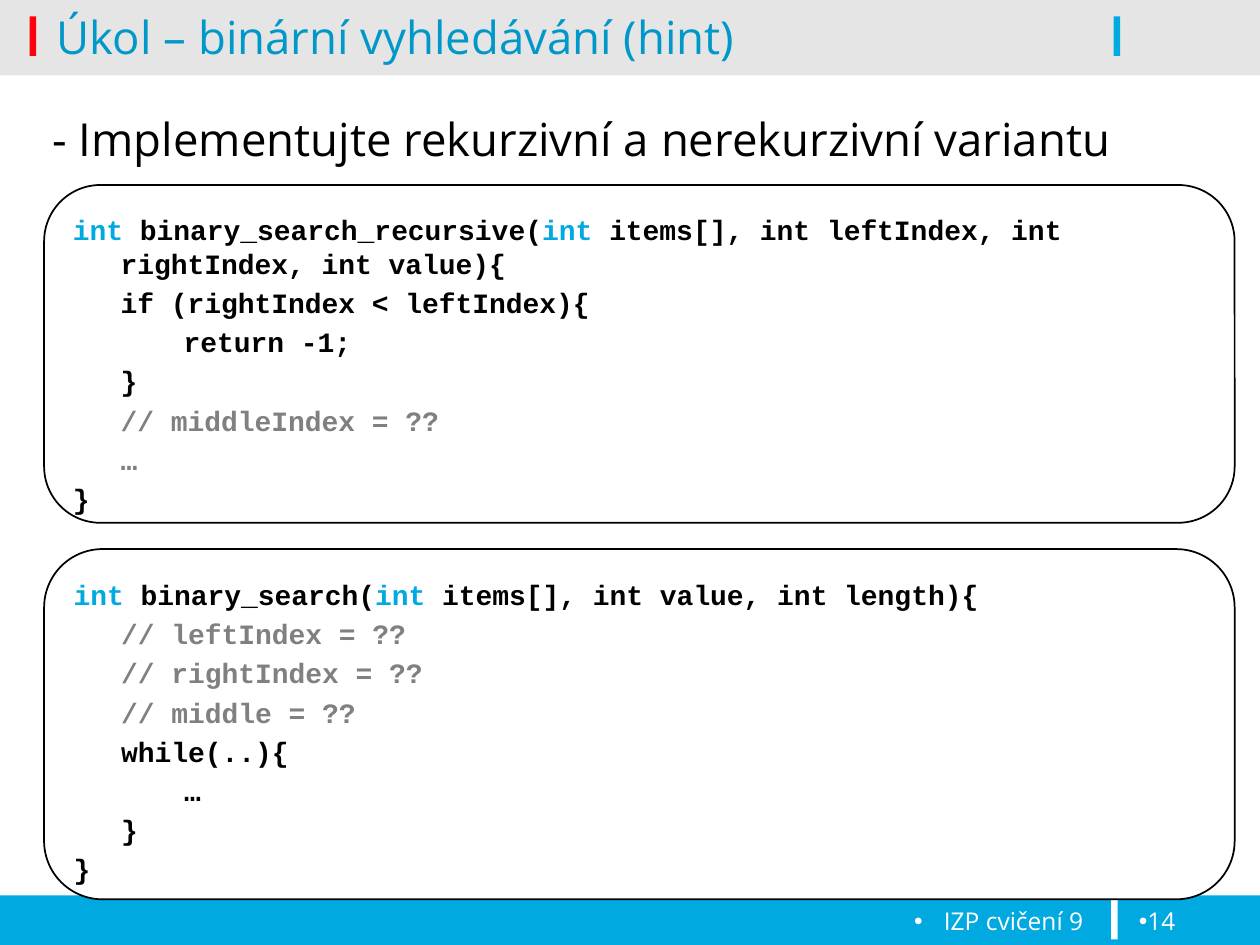
from dataclasses import dataclass

from pptx import Presentation
from pptx.dml.color import RGBColor
from pptx.enum.shapes import MSO_SHAPE as Preset
from pptx.enum.text import MSO_ANCHOR as Anchor, PP_ALIGN as Align
from pptx.oxml.ns import qn
from pptx.util import Cm, Pt
from lxml.etree import SubElement


@dataclass(frozen=True)
class Theme:
    blue: str = "00A9E0"
    red: str = "FE000C"
    white: str = "FFFFFF"
    black: str = "000000"
    gray: str = "808080"
    sans: str = "Open Sans"
    mono: str = "Courier New"
    large: int = 26
    code: int = 16
    small: int = 14


THEME = Theme()

RECURSIVE = [
    [("int ", THEME.blue), ("binary_search_recursive(", THEME.black), ("int ", THEME.blue),
     ("items[], int leftIndex, int rightIndex, int value){", THEME.black)],
    [("\tif (rightIndex < leftIndex){", THEME.black)],
    [("\t\treturn -1;", THEME.black)],
    [("\t}", THEME.black)],
    [("\t// middleIndex = ??", THEME.gray)],
    [("\t…", THEME.gray)],
    [("}", THEME.black)],
]
ITERATIVE = [
    [("int ", THEME.blue), ("binary_search(", THEME.black), ("int ", THEME.blue),
     ("items[], int value, int length){", THEME.black)],
    [("\t// leftIndex = ??", THEME.gray)],
    [("\t// rightIndex = ??", THEME.gray)],
    [("\t// middle = ??", THEME.gray)],
    [("\twhile(..){", THEME.black)],
    [("\t\t…", THEME.black)],
    [("\t}", THEME.black)],
    [("}", THEME.black)],
]


def place(shape, left, top, width, height):
    shape.left, shape.top, shape.width, shape.height = map(Cm, (left, top, width, height))


def write(para, text, *, size, color, font=THEME.sans, bold=False, align=Align.LEFT):
    para.alignment = align
    span = para.add_run()
    span.text = text
    span.font.name, span.font.size, span.font.bold = font, Pt(size), bold
    span.font.color.rgb = RGBColor.from_string(color)


def hang(para, margin, bullet=None):
    """Set a hanging indent in centimetres, with an optional bullet."""
    properties = para._p.get_or_add_pPr()
    properties.set("marL", str(Cm(margin)))
    properties.set("indent", str(-Cm(margin)))
    if bullet:
        SubElement(properties, qn("a:buFont")).set("typeface", "Arial")
        SubElement(properties, qn("a:buChar")).set("char", bullet)


def add_bar(page, area, color, alpha=None):
    bar = page.shapes.add_shape(Preset.RECTANGLE, *map(Cm, area))
    bar.shadow.inherit = False
    bar.fill.solid()
    bar.fill.fore_color.rgb = RGBColor.from_string(color)
    bar.line.fill.background()
    if alpha:
        tint = bar._element.spPr.find(f".//{qn('a:srgbClr')}")
        SubElement(tint, qn("a:alpha")).set("val", str(alpha * 1000))


def add_label(page, area, text, bullet=None, margin=0, **style):
    box = page.shapes.add_textbox(*map(Cm, area))
    box.text_frame.word_wrap = True
    para = box.text_frame.paragraphs[0]
    hang(para, margin, bullet)
    write(para, text, **style)


def add_code(page, area, lines):
    box = page.shapes.add_shape(Preset.ROUNDED_RECTANGLE, *map(Cm, area))
    box.shadow.inherit = False
    box.fill.solid()
    box.fill.fore_color.rgb = RGBColor.from_string(THEME.white)
    box.line.color.rgb = RGBColor.from_string(THEME.black)
    box.line.width = Pt(1)
    frame = box.text_frame
    frame.word_wrap = True
    frame.vertical_anchor = Anchor.TOP
    frame.margin_top = Cm(0.23)
    for number, line in enumerate(lines):
        para = frame.add_paragraph() if number else frame.paragraphs[0]
        hang(para, 0.96)
        if number:
            para.space_before = Pt(THEME.code * 0.2)
        for text, color in line:
            write(para, text, size=THEME.code, color=color, font=THEME.mono, bold=True)


def add_title(page, text):
    title = page.shapes.title
    place(title, 0.89, -0.28, 21.39, 2.01)
    title.text_frame.vertical_anchor = Anchor.MIDDLE
    write(title.text_frame.paragraphs[0], text, size=THEME.large, color=THEME.blue)


def main():
    deck = Presentation()
    deck.slide_width, deck.slide_height = Cm(25.4), Cm(19.05)
    page = deck.slides.add_slide(deck.slide_layouts[5])

    # Header and footer bands with their markers
    add_bar(page, (0, 18.05, 25.4, 1), THEME.blue)
    add_bar(page, (0, 0, 25.4, 1.52), THEME.black, alpha=10)
    add_bar(page, (0.6, 0.33, 0.13, 0.8), THEME.red)
    add_bar(page, (22.4, 18.14, 0.13, 0.8), THEME.white)
    add_bar(page, (22.45, 0.33, 0.13, 0.8), THEME.blue)

    # Title and task
    add_title(page, "Úkol – binární vyhledávání (hint)")
    add_label(page, (0.81, 2.11, 23.19, 1.37),
              "- Implementujte rekurzivní a nerekurzivní variantu",
              size=THEME.large, color=THEME.black)

    # Code frames
    add_code(page, (0.89, 3.73, 24, 6.81), RECURSIVE)
    add_code(page, (0.89, 11.07, 24, 7.06), ITERATIVE)

    # Footer text
    footer = dict(bullet="•", size=THEME.small, color=THEME.white)
    add_label(page, (0.3, 18.14, 21.79, 0.91), "IZP cvičení 9",
              margin=0.6, align=Align.RIGHT, **footer)
    add_label(page, (22.71, 18.14, 2.29, 0.91), "14", **footer)

    deck.save("out.pptx")


if __name__ == "__main__":
    main()
